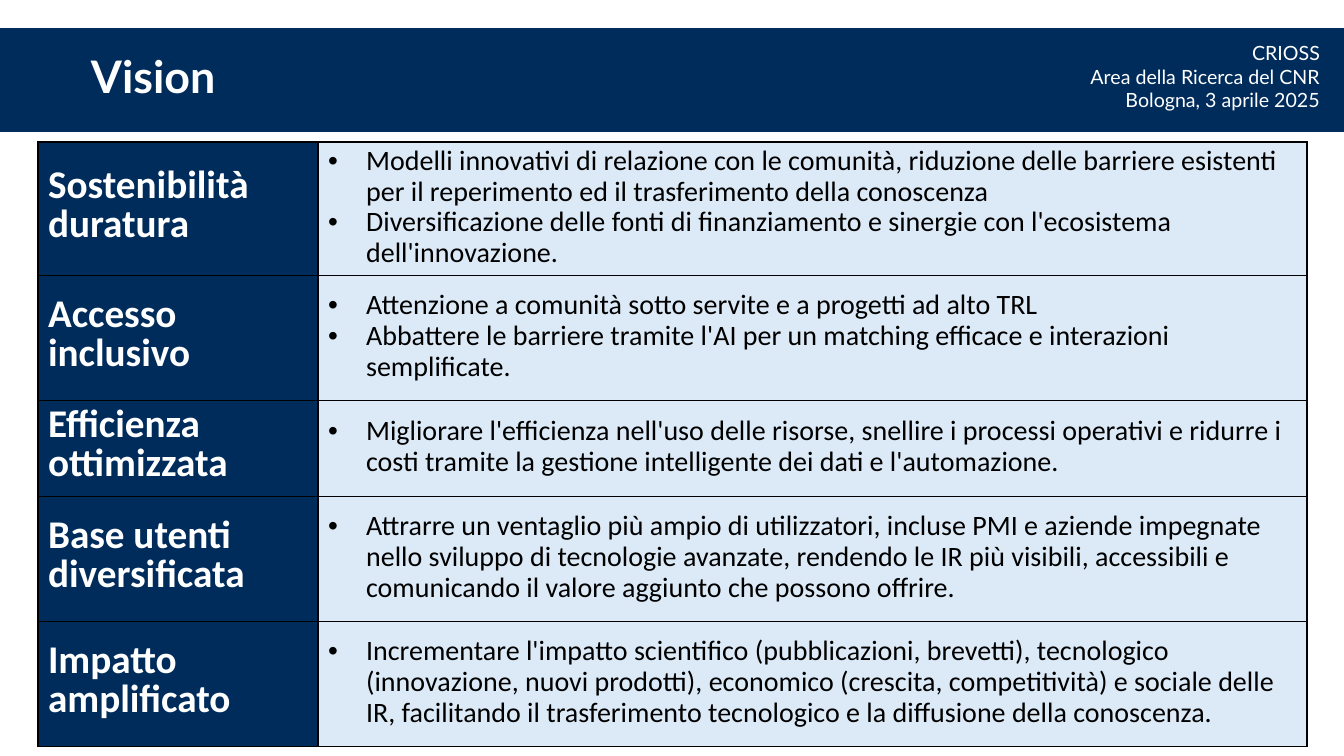
from lxml import etree
from pptx import Presentation
from pptx import util as u
from pptx.dml.color import RGBColor
from pptx.enum import shapes, text
from pptx.oxml import ns

SCALE = 914400 / 100.8
NAVY = RGBColor(0x00, 0x2C, 0x5C)
PALE = RGBColor(0xDC, 0xEA, 0xF7)
WHITE = RGBColor(0xFF, 0xFF, 0xFF)
BLACK = RGBColor(0x00, 0x00, 0x00)

TITLE = "Vision"
EVENT = "CRIOSS\vArea della Ricerca del CNR\nBologna, 3 aprile 2025"
COLUMN_WIDTHS = (280, 989)
GOALS = [
    (125, "Sostenibilità duratura", [
        "Modelli innovativi di relazione con le comunità, riduzione delle barriere esistenti "
        "per il reperimento ed il trasferimento della conoscenza",
        "Diversificazione delle fonti di finanziamento e sinergie con l'ecosistema "
        "dell'innovazione."]),
    (125, "Accesso inclusivo", [
        "Attenzione a comunità sotto servite e a progetti ad alto TRL",
        "Abbattere le barriere tramite l'AI per un matching efficace e interazioni "
        "semplificate."]),
    (96, "Efficienza ottimizzata", [
        "Migliorare l'efficienza nell'uso delle risorse, snellire i processi operativi e "
        "ridurre i costi tramite la gestione intelligente dei dati e l'automazione."]),
    (125, "Base utenti diversificata", [
        "Attrarre un ventaglio più ampio di utilizzatori, incluse PMI e aziende impegnate "
        "nello sviluppo di tecnologie avanzate, rendendo le IR più visibili, accessibili e "
        "comunicando il valore aggiunto che possono offrire."]),
    (125, "Impatto amplificato", [
        "Incrementare l'impatto scientifico (pubblicazioni, brevetti), tecnologico "
        "(innovazione, nuovi prodotti), economico (crescita, competitività) e sociale delle "
        "IR, facilitando il trasferimento tecnologico e la diffusione della conoscenza."]),
]


def px(length):
    """Turn a length in px into EMU."""
    return u.Emu(round(length * SCALE))


def style(para, font, size, color, bold=False):
    """Format every run of a paragraph."""
    for span in para.runs:
        span.font.name = font
        span.font.size = u.Pt(size)
        span.font.bold = bold
        span.font.color.rgb = color


def add_label(page, box, wording, size, bold, align, anchor, spacing):
    """Place a white Lato text box."""
    frame = page.shapes.add_textbox(*map(px, box)).text_frame
    frame.word_wrap = True
    frame.vertical_anchor = anchor
    frame.text = wording
    for para in frame.paragraphs:
        para.alignment = align
        para.line_spacing = spacing
        style(para, "Lato", size, WHITE, bold)


def add_header(page, box):
    """Draw the navy band with the title and the event details."""
    left, top, width, height = box
    band = page.shapes.add_shape(shapes.MSO_SHAPE.RECTANGLE, *map(px, box))
    band.shadow.inherit = False
    band.fill.solid()
    band.fill.fore_color.rgb = NAVY
    band.line.fill.background()
    add_label(page, (left + 81, top + 4, 1159, 93), TITLE, 32, True,
              text.PP_ALIGN.LEFT, text.MSO_ANCHOR.MIDDLE, 0.9)
    add_label(page, (left + width - 566, top + 8, 552, 82), EVENT, 14, False,
              text.PP_ALIGN.RIGHT, text.MSO_ANCHOR.TOP, 1.0)


def add_bullet(para):
    """Give a paragraph a hanging bullet."""
    properties = para._p.get_or_add_pPr()
    properties.set("marL", str(px(38)))
    properties.set("indent", str(px(-38)))
    etree.SubElement(properties, ns.qn("a:buFont")).set("typeface", "Arial")
    etree.SubElement(properties, ns.qn("a:buChar")).set("char", "•")


def fill_cell(cell, wording, fill, color, size, leading, bold=False, bullets=False):
    """Write and format one bordered table cell."""
    properties = cell._tc.get_or_add_tcPr()
    for side in ("lnL", "lnR", "lnT", "lnB"):
        border = etree.SubElement(properties, ns.qn(f"a:{side}"), w=str(u.Pt(1)))
        paint = etree.SubElement(border, ns.qn("a:solidFill"))
        etree.SubElement(paint, ns.qn("a:srgbClr"), val=str(BLACK))
    cell.fill.solid()
    cell.fill.fore_color.rgb = fill
    cell.vertical_anchor = text.MSO_ANCHOR.MIDDLE
    cell.text_frame.text = wording
    for para in cell.text_frame.paragraphs:
        para.line_spacing = u.Pt(leading)
        style(para, "Calibri", size, color, bold)
        if bullets:
            add_bullet(para)


def add_goals(page, box):
    """Lay out the table of goals."""
    table = page.shapes.add_table(len(GOALS), len(COLUMN_WIDTHS), *map(px, box)).table
    for column, width in zip(table.columns, COLUMN_WIDTHS):
        column.width = px(width)
    for row, (height, goal, points) in zip(table.rows, GOALS):
        row.height = px(height)
        heading, body = row.cells
        fill_cell(heading, goal, NAVY, WHITE, 28, 28, bold=True)
        fill_cell(body, "\n".join(points), PALE, BLACK, 20, 22, bullets=True)


def main():
    """Build and save the deck."""
    deck = Presentation()
    deck.slide_width, deck.slide_height = px(1344), px(756)
    page = deck.slides.add_slide(deck.slide_layouts[6])
    add_header(page, (0, 28, 1344, 104))
    add_goals(page, (38, 142, sum(COLUMN_WIDTHS), sum(goal[0] for goal in GOALS)))
    deck.save("out.pptx")


if __name__ == "__main__":
    main()
